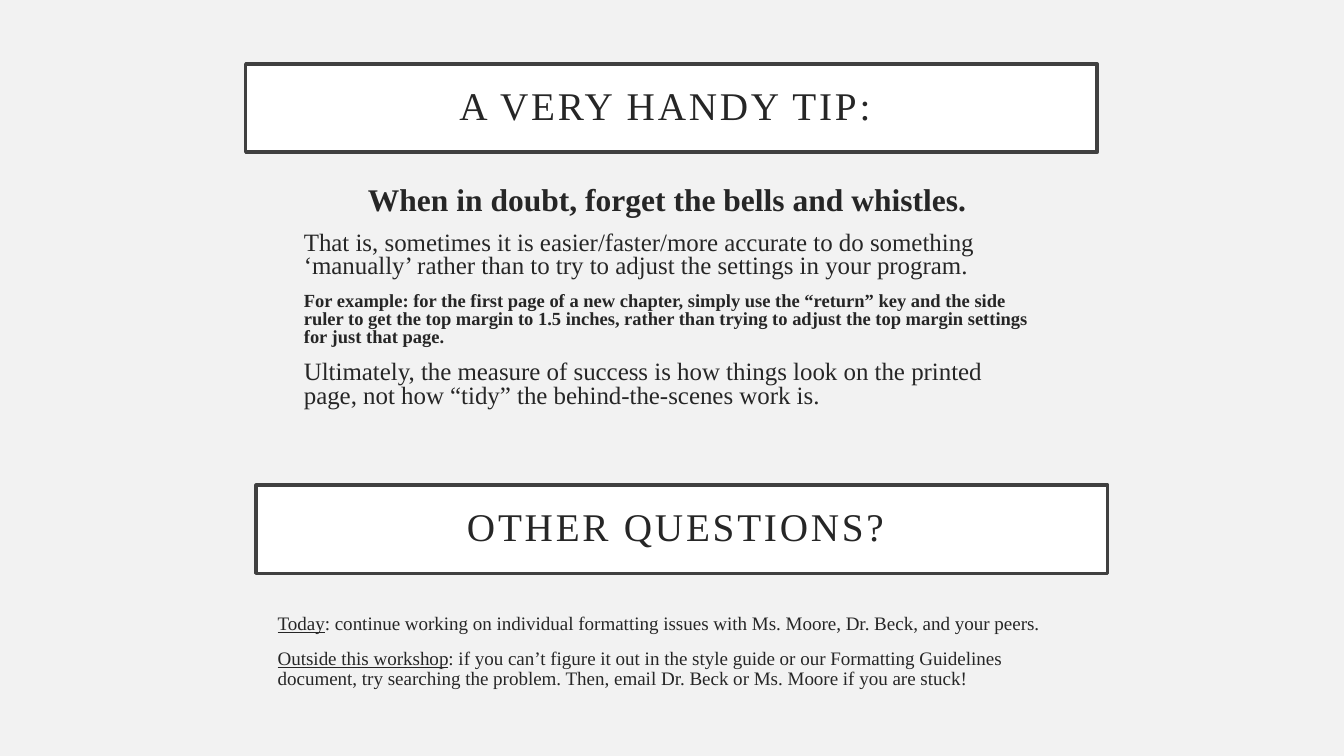
from pptx import Presentation
from pptx.dml.color import RGBColor
from pptx.enum.shapes import MSO_SHAPE
from pptx.enum.text import MSO_ANCHOR, PP_ALIGN
from pptx.util import Pt

RECTANGLE = MSO_SHAPE.RECTANGLE
MIDDLE, TOP = MSO_ANCHOR.MIDDLE, MSO_ANCHOR.TOP
LEFT, CENTER = PP_ALIGN.LEFT, PP_ALIGN.CENTER

PX = 9525  # 96 px to the inch
FONT = "Times New Roman"
COLORS = {"page": "F2F2F2", "banner": "FFFFFF", "border": "404040", "text": "262626"}

# Boxes: left, top, width, height in px
TIP_BANNER = (234, 61, 811, 84)
TIP_BODY = (280, 174, 719, 227)
QUESTIONS_BANNER = (244, 462, 811, 84)
QUESTIONS_BODY = (255, 580, 769, 106)

# Paragraphs: alignment, then spans of text and font values
HEADLINE = {"size": Pt(22.5), "bold": True}
STATEMENT = {"size": Pt(17.8)}
EXAMPLE = {"size": Pt(13.2), "bold": True}
ANSWER = {"size": Pt(13.6)}
LEAD = {"size": Pt(13.6), "underline": True}

TIP_TEXT = [
    (CENTER, [("When in doubt, forget the bells and whistles. ", HEADLINE)]),
    (LEFT, [("That is, sometimes it is easier/faster/more accurate to do something "
             "‘manually’ rather than to try to adjust the settings in your program.", STATEMENT)]),
    (LEFT, [("For example: for the first page of a new chapter, simply use the “return” key "
             "and the side ruler to get the top margin to 1.5 inches, rather than trying to "
             "adjust the top margin settings for just that page.", EXAMPLE)]),
    (LEFT, [("Ultimately, the measure of success is how things look on the printed page, "
             "not how “tidy” the behind-the-scenes work is.", STATEMENT)]),
]
QUESTIONS_TEXT = [
    (LEFT, [("Today", LEAD),
            (": continue working on individual formatting issues with Ms. Moore, Dr. Beck, "
             "and your peers.", ANSWER)]),
    (LEFT, [("Outside this workshop", LEAD),
            (": if you can’t figure it out in the style guide or our Formatting Guidelines "
             "document, try searching the problem. Then, email Dr. Beck or Ms. Moore if you "
             "are stuck!", ANSWER)]),
]


def color(name):
    return RGBColor.from_string(COLORS[name])


def scaled(box):
    return [length * PX for length in box]


def set_values(target, values):
    for name, value in values.items():
        setattr(target, name, value)


def add_span(para, text, font_values):
    span = para.add_run()
    span.text = text
    set_values(span.font, {"name": FONT, **font_values})
    span.font.color.rgb = color("text")
    return span


def add_banner(page, box, text):
    banner = page.shapes.add_shape(RECTANGLE, *scaled(box))
    banner.shadow.inherit = False
    banner.fill.solid()
    banner.fill.fore_color.rgb = color("banner")
    banner.line.color.rgb = color("border")
    banner.line.width = Pt(2.5)

    frame = banner.text_frame
    margins = ("margin_left", "margin_top", "margin_right", "margin_bottom")
    set_values(frame, dict.fromkeys(margins, 19 * PX))
    set_values(frame, {"word_wrap": True, "vertical_anchor": MIDDLE})
    para = frame.paragraphs[0]
    set_values(para, {"alignment": CENTER, "line_spacing": 0.9})
    span = add_span(para, text, {"size": Pt(28)})
    # Letter spacing of 2 pt
    span.font._element.set("spc", "200")


def add_body(page, box, paragraphs, line_spacing):
    frame = page.shapes.add_textbox(*scaled(box)).text_frame
    set_values(frame, {"word_wrap": True, "vertical_anchor": TOP})
    for index, (alignment, spans) in enumerate(paragraphs):
        para = frame.add_paragraph() if index else frame.paragraphs[0]
        set_values(para, {"alignment": alignment, "line_spacing": line_spacing,
                          "space_before": Pt(10)})
        for text, font_values in spans:
            add_span(para, text, font_values)


def main():
    deck = Presentation()
    set_values(deck, {"slide_width": 1280 * PX, "slide_height": 720 * PX})
    page = deck.slides.add_slide(deck.slide_layouts[6])
    page.background.fill.solid()
    page.background.fill.fore_color.rgb = color("page")

    # Questions section
    add_banner(page, QUESTIONS_BANNER, "OTHER QUESTIONS? ")
    add_body(page, QUESTIONS_BODY, QUESTIONS_TEXT, 0.9)

    # Tip section
    add_banner(page, TIP_BANNER, "A VERY HANDY TIP: ")
    add_body(page, TIP_BODY, TIP_TEXT, 0.8)

    deck.save("out.pptx")


if __name__ == "__main__":
    main()
